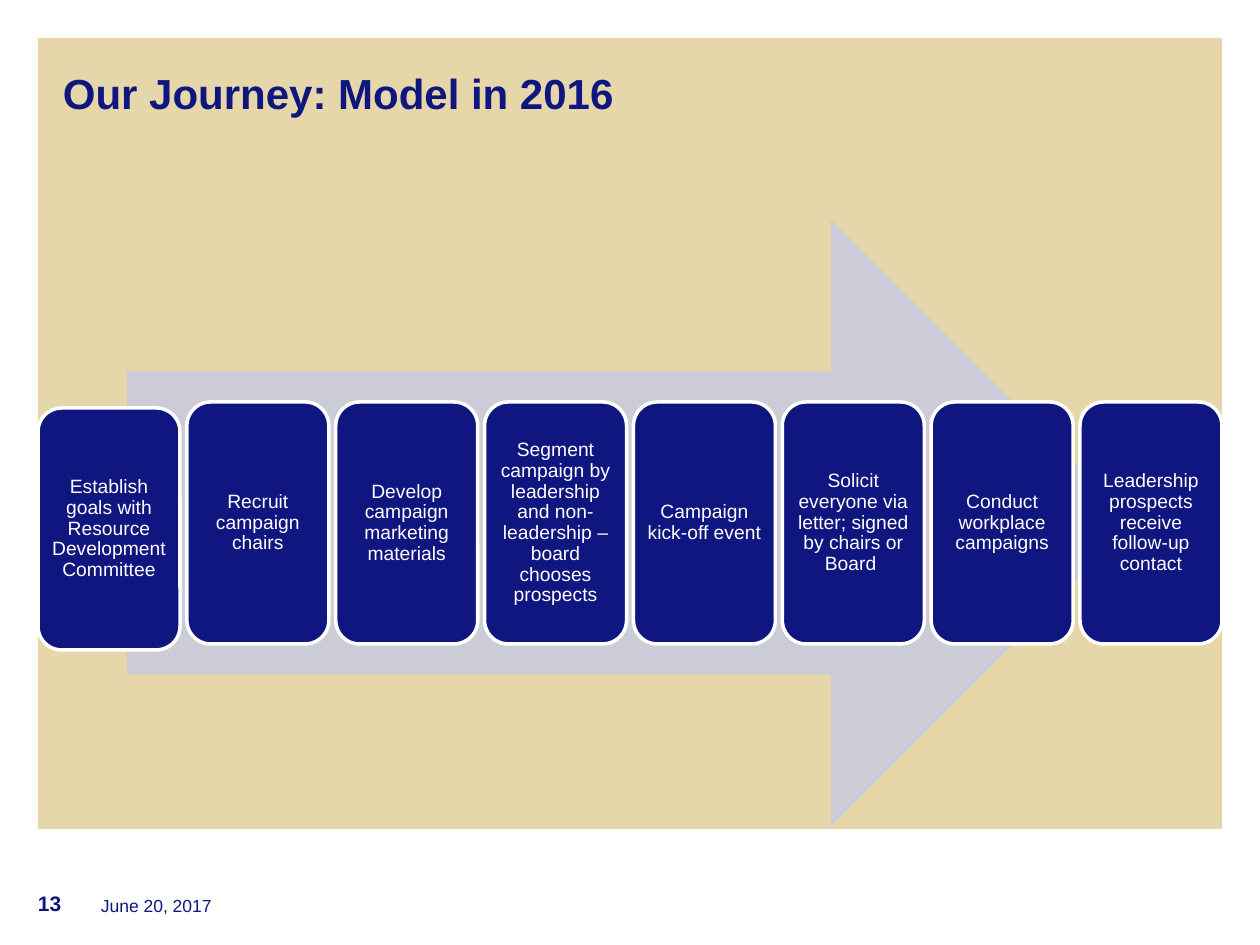
import pptx
import pptx.dml.color
import pptx.enum.shapes
import pptx.enum.text
import pptx.util

NAVY = pptx.dml.color.RGBColor(0x10, 0x16, 0x7F)
SAND = pptx.dml.color.RGBColor(0xE6, 0xD7, 0xAA)
MIST = pptx.dml.color.RGBColor(0xCC, 0xCC, 0xD8)
WHITE = pptx.dml.color.RGBColor(0xFF, 0xFF, 0xFF)
SHAPE = pptx.enum.shapes.MSO_SHAPE
ANCHOR = pptx.enum.text.MSO_ANCHOR
ALIGN = pptx.enum.text.PP_ALIGN
EMU_PER_PX = 914400 / 126

STEPS = [
    "Establish goals with Resource Development Committee",
    "Recruit campaign chairs",
    "Develop campaign marketing materials",
    "Segment campaign by leadership and non-leadership – board chooses prospects",
    "Campaign kick-off event",
    "Solicit everyone via letter; signed by chairs or Board ",
    "Conduct workplace campaigns",
    "Leadership prospects receive follow-up contact",
]


def px(length):
    """Turn a length in px into EMU."""
    return pptx.util.Emu(round(length * EMU_PER_PX))


def add_box(page, kind, box, fill, line=None):
    """Add a filled preset shape, outlined if a line colour is given."""
    shape = page.shapes.add_shape(kind, *map(px, box))
    shape.shadow.inherit = False
    shape.fill.solid()
    shape.fill.fore_color.rgb = fill
    if line is None:
        shape.line.fill.background()
    else:
        shape.line.color.rgb = line
        shape.line.width = pptx.util.Pt(2)
    return shape


def write_text(shape, text, size, color=NAVY, bold=False, align=ALIGN.LEFT,
               anchor=ANCHOR.TOP, insets=(0, 0, 0, 0), spacing=None):
    """Write one formatted paragraph into a shape."""
    frame = shape.text_frame
    frame.word_wrap = True
    frame.vertical_anchor = anchor
    (frame.margin_left, frame.margin_top,
     frame.margin_right, frame.margin_bottom) = map(px, insets)
    para = frame.paragraphs[0]
    para.alignment = align
    para.line_spacing = spacing
    span = para.add_run()
    span.text = text
    span.font.name = "Arial"
    span.font.size = pptx.util.Pt(size)
    span.font.bold = bold
    span.font.color.rgb = color


def add_panel(page, box):
    """Draw the sand panel with the title along its top."""
    left, top, width, height = box
    add_box(page, SHAPE.RECTANGLE, box, SAND)
    title = page.shapes.add_textbox(*map(px, (left, top, width, 158)))
    write_text(title, "Our Journey: Model in 2016", 24, bold=True,
               insets=(25, 29, 63, 0))


def add_journey(page, box):
    """Draw the arrow and the row of steps across the box."""
    left, top, width, height = box
    add_box(page, SHAPE.RIGHT_ARROW, (left + 89, top, 1007, height), MIST)
    step_width, step_height = 142, 242
    pitch = (width - step_width) / (len(STEPS) - 1)
    middle_top = top + (height - step_height) / 2
    for index, text in enumerate(STEPS):
        step_top = middle_top + (6 if index == 0 else 0)
        step = add_box(page, SHAPE.ROUNDED_RECTANGLE,
                       (left + index * pitch, step_top, step_width, step_height),
                       NAVY, WHITE)
        write_text(step, text, 11, color=WHITE, align=ALIGN.CENTER,
                   anchor=ANCHOR.MIDDLE, insets=(6, 6, 6, 6), spacing=0.9)


def add_footer(page, box):
    """Write the page number and the date."""
    left, top, width, height = box
    number_width = 63
    number = page.shapes.add_textbox(*map(px, (left, top, number_width, height)))
    date = page.shapes.add_textbox(
        *map(px, (left + number_width, top, width - number_width, height)))
    write_text(number, "13", 12, bold=True, anchor=ANCHOR.BOTTOM, insets=(0, 0, 0, 10))
    write_text(date, "June 20, 2017", 10, anchor=ANCHOR.BOTTOM, insets=(0, 0, 0, 10))


def main():
    """Build and save the deck."""
    deck = pptx.Presentation()
    deck.slide_width, deck.slide_height = px(1260), px(945)
    page = deck.slides.add_slide(deck.slide_layouts[6])
    add_panel(page, (38, 38, 1184, 791))
    add_journey(page, (38, 220, 1184, 606))
    add_footer(page, (38, 863, 945, 63))
    deck.save("out.pptx")


if __name__ == "__main__":
    main()
